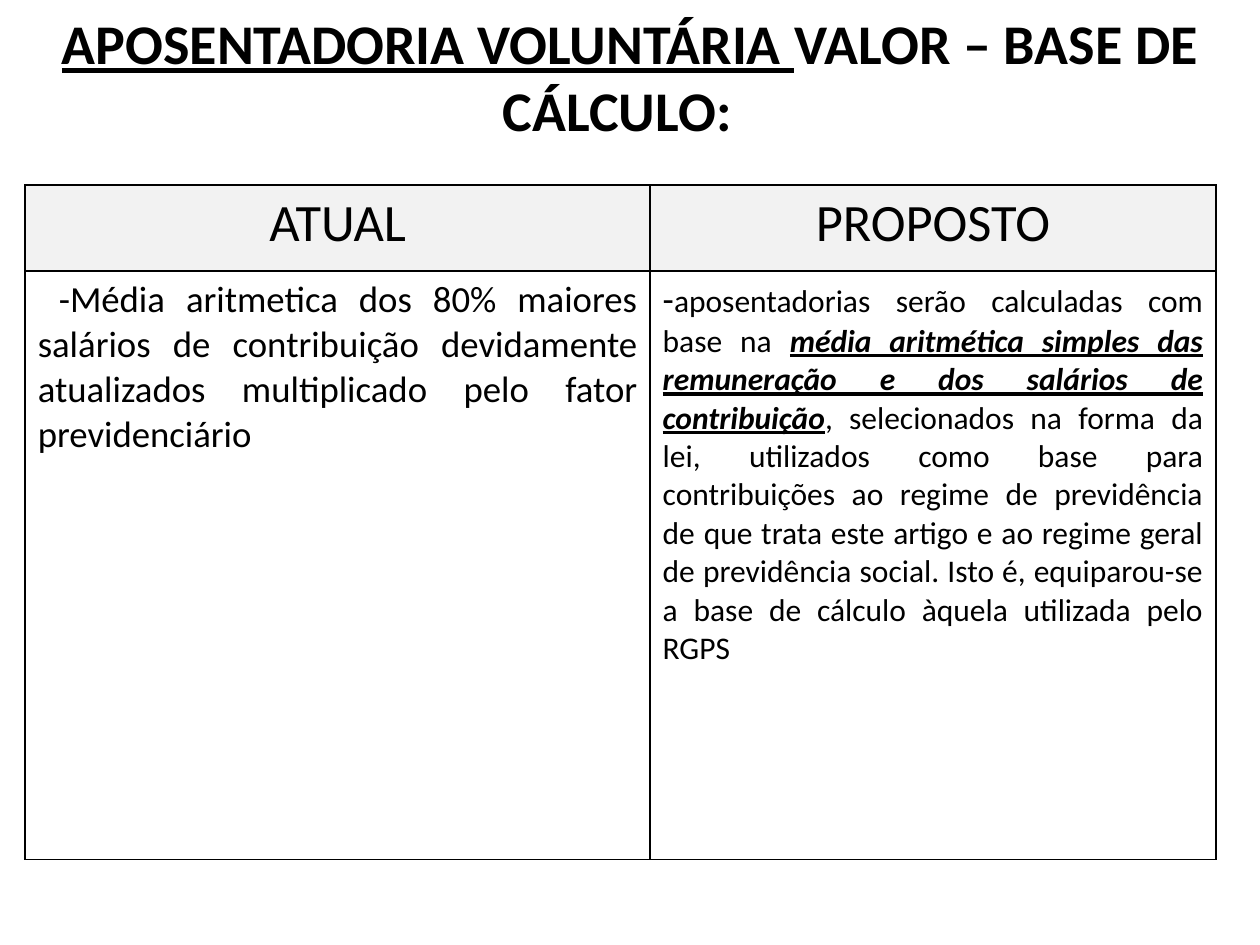
from dataclasses import dataclass

from lxml import etree
from pptx import Presentation
from pptx.dml.color import RGBColor
from pptx.enum.text import PP_ALIGN
from pptx.oxml.ns import qn
from pptx.util import Inches, Pt

CENTER, JUSTIFY = PP_ALIGN.CENTER, PP_ALIGN.JUSTIFY


@dataclass(frozen=True)
class Theme:
    font: str = "Calibri"
    ink: str = "000000"
    head_fill: str = "F2F2F2"
    title: int = 32
    head: int = 30
    body: int = 21
    small: int = 18
    border: int = 1


THEME = Theme()

TITLE = [
    ("APOSENTADORIA VOLUNTÁRIA ", THEME.title, "bu"),
    ("VALOR – BASE DE CÁLCULO:  ", THEME.title, "b"),
]
HEADS = [[("ATUAL", THEME.head, "")], [("PROPOSTO", THEME.head, "")]]
BODIES = [
    [(" -Média aritmetica dos 80% maiores salários de contribuição "
      "devidamente atualizados multiplicado pelo fator previdenciário",
      THEME.body, "")],
    [("-", THEME.body, ""),
     ("aposentadorias serão calculadas com base na ", THEME.small, ""),
     ("média aritmética simples das remuneração e dos salários de "
      "contribuição", THEME.small, "biu"),
     (", selecionados na forma da lei, utilizados como base para "
      "contribuições ao regime de previdência de que trata este artigo e "
      "ao regime geral de previdência social. Isto é, equiparou-se a base "
      "de cálculo àquela utilizada pelo RGPS", THEME.small, "")],
]


def write(frame, runs, align):
    """Fill the first paragraph; style letters are b, i and u."""
    para = frame.paragraphs[0]
    para.alignment = align
    for text, size, style in runs:
        run = para.add_run()
        run.text = text
        font = run.font
        font.name, font.size = THEME.font, Pt(size)
        font.color.rgb = RGBColor.from_string(THEME.ink)
        font.bold = "b" in style
        font.italic = "i" in style
        font.underline = "u" in style


def add_borders(cell):
    props = cell._tc.get_or_add_tcPr()
    for place, side in enumerate(("lnL", "lnR", "lnT", "lnB")):
        line = etree.Element(qn(f"a:{side}"), w=str(Pt(THEME.border)))
        fill = etree.SubElement(line, qn("a:solidFill"))
        etree.SubElement(fill, qn("a:srgbClr"), val=THEME.ink)
        props.insert(place, line)


def add_title(slide, left, top, width, height):
    frame = slide.shapes.add_textbox(left, top, width, height).text_frame
    frame.word_wrap = True
    write(frame, TITLE, CENTER)


def add_grid(slide, left, top, width, height):
    """Place the comparison of the current and the proposed rule."""
    table = slide.shapes.add_table(2, 2, left, top, width, height).table
    first, head = Inches(4.96), Inches(0.68)
    table.columns[0].width, table.columns[1].width = first, width - first
    table.rows[0].height, table.rows[1].height = head, height - head
    for row, texts in enumerate((HEADS, BODIES)):
        for col, runs in enumerate(texts):
            cell = table.cell(row, col)
            if row == 0:
                cell.fill.solid()
                cell.fill.fore_color.rgb = RGBColor.from_string(THEME.head_fill)
            else:
                cell.fill.background()
            add_borders(cell)
            write(cell.text_frame, runs, JUSTIFY if row else CENTER)


def main():
    deck = Presentation()
    deck.slide_width, deck.slide_height = Inches(10), Inches(7.5)
    slide = deck.slides.add_slide(deck.slide_layouts[6])
    add_title(slide, 0, Inches(0.02), deck.slide_width, Inches(1.25))
    add_grid(slide, Inches(0.2), Inches(1.47), Inches(9.45), Inches(5.35))
    deck.save("out.pptx")


if __name__ == "__main__":
    main()
